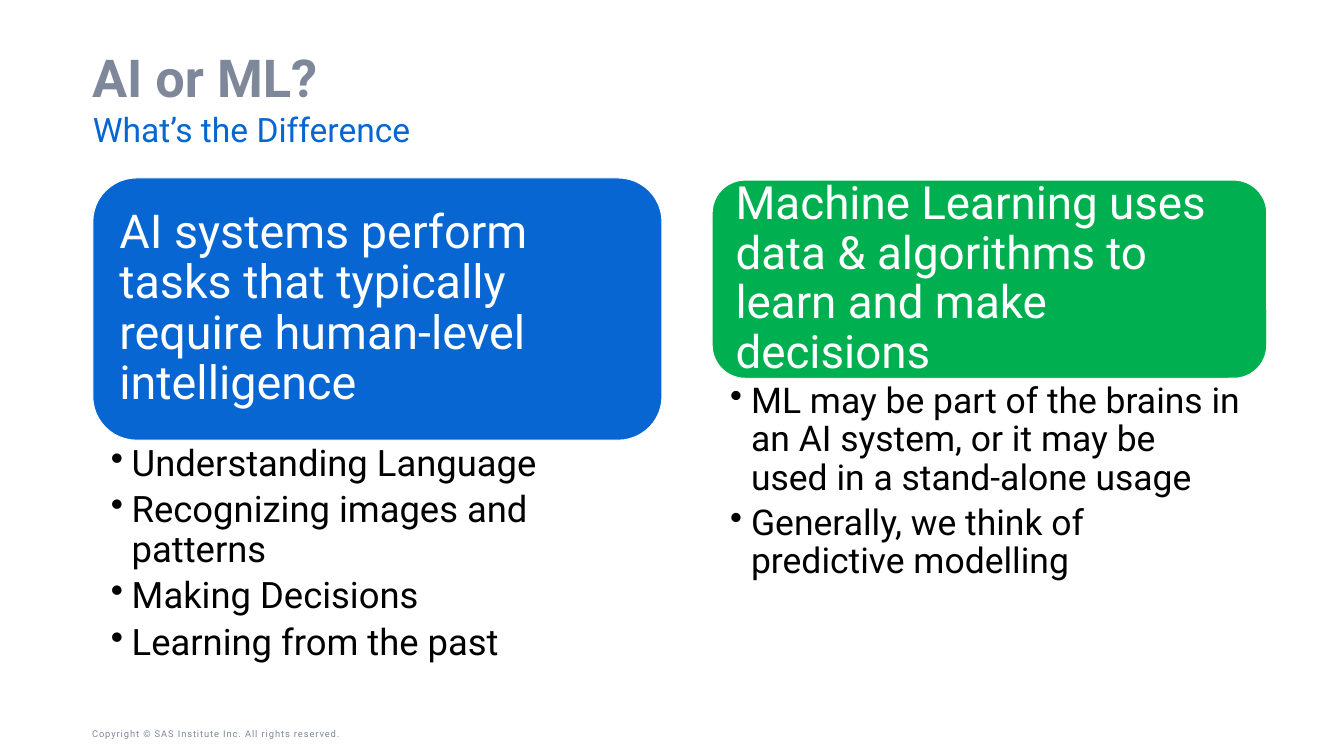
from lxml.etree import SubElement
from pptx import Presentation
from pptx.dml.color import RGBColor
from pptx.enum.shapes import MSO_SHAPE as Shape
from pptx.enum.text import MSO_ANCHOR as Anchor, PP_ALIGN as Align
from pptx.oxml.ns import qn
from pptx.util import Cm, Pt

COLORS = {
    "gray": "7E889A",
    "blue": "0766D1",
    "green": "00B050",
    "white": "FFFFFF",
    "black": "000000",
}
FONT = "Roboto"


def set_frame(shape, insets, anchor=Anchor.TOP):
    frame = shape.text_frame
    frame.word_wrap = True
    frame.vertical_anchor = anchor
    frame.margin_left, frame.margin_top, frame.margin_right, frame.margin_bottom = map(Cm, insets)
    return frame


def add_text(para, text, size, color, spacing=1.0, bold=False):
    para.alignment = Align.LEFT
    para.line_spacing = spacing
    span = para.add_run()
    span.text = text
    span.font.name = FONT
    span.font.size = Pt(size)
    span.font.bold = bold
    span.font.color.rgb = RGBColor.from_string(COLORS[color])
    return span


deck = Presentation()
deck.slide_width, deck.slide_height = Cm(50.8), Cm(28.58)
page = deck.slides.add_slide(deck.slide_layouts[6])

footer = page.shapes.add_textbox(Cm(3.48), Cm(27.38), Cm(13.97), Cm(0.69))
frame = set_frame(footer, (0, 0.13, 0.25, 0.13), Anchor.BOTTOM)
span = add_text(frame.paragraphs[0], "Copyright © SAS Institute Inc. All rights reserved.", 10, "gray")
span.font._element.set("spc", "100")

title = page.shapes.add_textbox(Cm(3.48), Cm(1.98), Cm(43.82), Cm(2.16))
frame = set_frame(title, (0, 0, 0, 0), Anchor.MIDDLE)
add_text(frame.paragraphs[0], "AI or ML?", 56, "gray", 0.9, True)

subtitle = page.shapes.add_textbox(Cm(3.51), Cm(4.34), Cm(43.82), Cm(1.52))
frame = set_frame(subtitle, (0, 0, 0, 0))
add_text(frame.paragraphs[0], "What’s the Difference", 36, "blue", 0.85)

columns = [
    (3.51, 6.73, 21.51, 9.91, 9.07, "blue", 50, 39,
     "AI systems perform tasks that typically require human-level intelligence",
     ["Understanding Language", "Recognizing images and patterns",
      "Making Decisions", "Learning from the past"]),
    (26.92, 6.81, 20.96, 7.49, 8.18, "green", 49, 38,
     "Machine Learning uses data & algorithms to learn and make decisions",
     ["ML may be part of the brains in an AI system, or it may be used in a stand-alone usage",
      "Generally, we think of predictive modelling"]),
]

for left, top, width, card_height, list_height, color, card_size, list_size, heading, points in columns:
    card = page.shapes.add_shape(Shape.ROUNDED_RECTANGLE, Cm(left), Cm(top), Cm(width), Cm(card_height))
    card.shadow.inherit = False
    card.fill.solid()
    card.fill.fore_color.rgb = RGBColor.from_string(COLORS[color])
    card.line.color.rgb = RGBColor.from_string(COLORS["white"])
    card.line.width = Pt(1)
    frame = set_frame(card, (0.52, 0.52, 0.52, 0.52), Anchor.MIDDLE)
    add_text(frame.paragraphs[0], heading, card_size, "white", 0.9)

    box = page.shapes.add_textbox(Cm(left), Cm(top + card_height), Cm(width), Cm(list_height))
    frame = set_frame(box, (0.68, 0.18, 0.98, 0.18))
    for index, point in enumerate(points):
        para = frame.add_paragraph() if index else frame.paragraphs[0]
        para.level = 1
        para.space_after = Pt(round(list_size * 0.2, 1))
        props = para._p.get_or_add_pPr()
        props.set("marL", str(Cm(0.79)))
        props.set("indent", str(-Cm(0.79)))
        para.line_spacing = 0.9
        SubElement(props, qn("a:buChar"), char="•")
        add_text(para, point, list_size, "black", 0.9)

deck.save("out.pptx")
